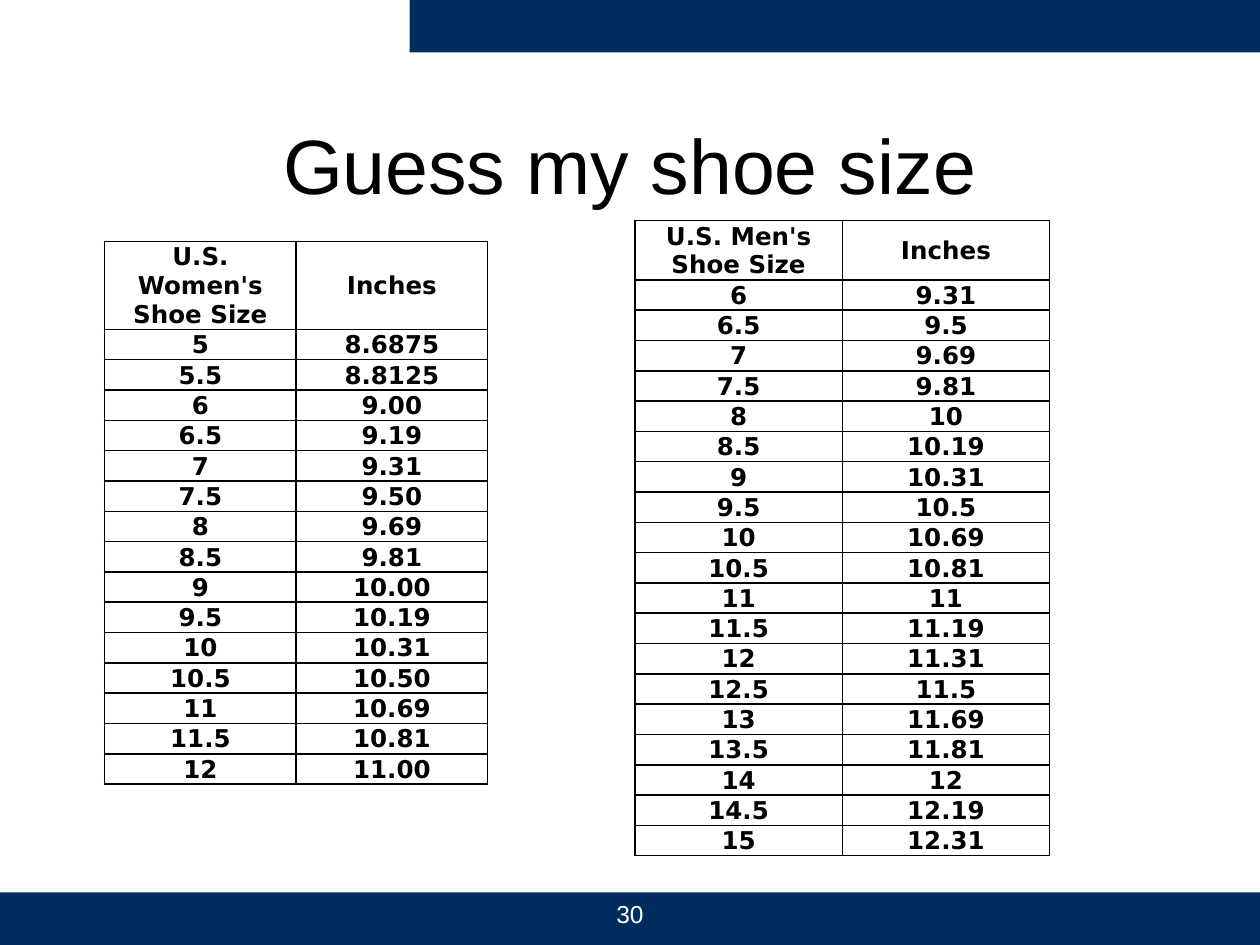
from lxml import etree
from pptx import Presentation
from pptx import util as u
from pptx.dml.color import RGBColor
from pptx.enum import shapes, text
from pptx.oxml import ns

NAVY, BLACK, WHITE = "002C5F", "000000", "FFFFFF"
TITLE_ONLY = 5

WOMEN_INCHES = ("8.6875 8.8125 9.00 9.19 9.31 9.50 9.69 9.81 10.00 10.19 "
                "10.31 10.50 10.69 10.81 11.00").split()
MEN_INCHES = ("9.31 9.5 9.69 9.81 10 10.19 10.31 10.5 10.69 10.81 11 11.19 "
              "11.31 11.5 11.69 11.81 12 12.19 12.31").split()


def colour(value):
    return RGBColor.from_string(value)


def centimetres(box):
    return [u.Cm(length) for length in box]


def write(frame, words, size, font, value, bold=False):
    """Put one centred line of formatted text in a frame."""
    frame.text = words
    frame.word_wrap = True
    para = frame.paragraphs[0]
    para.alignment = text.PP_ALIGN.CENTER
    for span in para.runs:
        span.font.size = u.Pt(size)
        span.font.name = font
        span.font.bold = bold
        span.font.color.rgb = colour(value)


def add_band(page, box):
    band = page.shapes.add_shape(shapes.MSO_SHAPE.RECTANGLE, *centimetres(box))
    band.shadow.inherit = False
    band.fill.solid()
    band.fill.fore_color.rgb = colour(NAVY)
    band.line.fill.background()


def add_title(page, box, words):
    title = page.shapes.title
    title.left, title.top, title.width, title.height = centimetres(box)
    write(title.text_frame, words, 44, "Arial", BLACK)
    title.text_frame.vertical_anchor = text.MSO_ANCHOR.MIDDLE


def add_borders(cell):
    properties = cell._tc.get_or_add_tcPr()
    for side in ("lnL", "lnR", "lnT", "lnB"):
        line = etree.SubElement(properties, ns.qn(f"a:{side}"), w=str(u.Pt(1)))
        fill = etree.SubElement(line, ns.qn("a:solidFill"))
        etree.SubElement(fill, ns.qn("a:srgbClr"), val=BLACK)


def fill_cell(cell, words):
    write(cell.text_frame, words, 14, "DejaVu Sans", BLACK, bold=True)
    cell.vertical_anchor = text.MSO_ANCHOR.MIDDLE
    cell.margin_left = cell.margin_right = cell.margin_top = u.Cm(0.03)
    cell.margin_bottom = 0
    add_borders(cell)
    cell.fill.background()


def add_size_table(page, box, heading, first_size, inches):
    """Sizes rise by a half; the header is two body rows high."""
    rows = [(heading, "Inches")]
    rows += [(f"{first_size + step / 2:g}", length)
             for step, length in enumerate(inches)]
    left, top, width, height = centimetres(box)
    table = page.shapes.add_table(len(rows), 2, left, top, width, height).table
    table.first_row = table.horz_banding = False
    for column in table.columns:
        column.width = width // 2
    row_height = height // (len(rows) + 1)
    for number, values in enumerate(rows):
        table.rows[number].height = row_height * (1 if number else 2)
        for column, words in enumerate(values):
            fill_cell(table.cell(number, column), words)


def add_page_number(page, box, number):
    label = page.shapes.add_textbox(*centimetres(box))
    write(label.text_frame, number, 14, "Arial", WHITE)


def main():
    deck = Presentation()
    deck.slide_width, deck.slide_height = u.Cm(25.4), u.Cm(19.05)
    page = deck.slides.add_slide(deck.slide_layouts[TITLE_ONLY])

    # Bands at the top and bottom
    add_band(page, (8.26, 0, 17.14, 1.06))
    add_band(page, (0, 17.99, 25.4, 1.06))

    # Title and size tables
    add_title(page, (1.9, 1.7, 21.6, 3.18), "Guess my shoe size")
    add_size_table(page, (2.11, 4.87, 7.72, 10.4),
                   "U.S. Women's Shoe Size", 5, WOMEN_INCHES)
    add_size_table(page, (12.8, 4.45, 8.36, 10.9),
                   "U.S. Men's Shoe Size", 6, MEN_INCHES)

    # Page number
    add_page_number(page, (11.22, 17.99, 2.96, 0.85), "30")
    deck.save("out.pptx")


if __name__ == "__main__":
    main()
